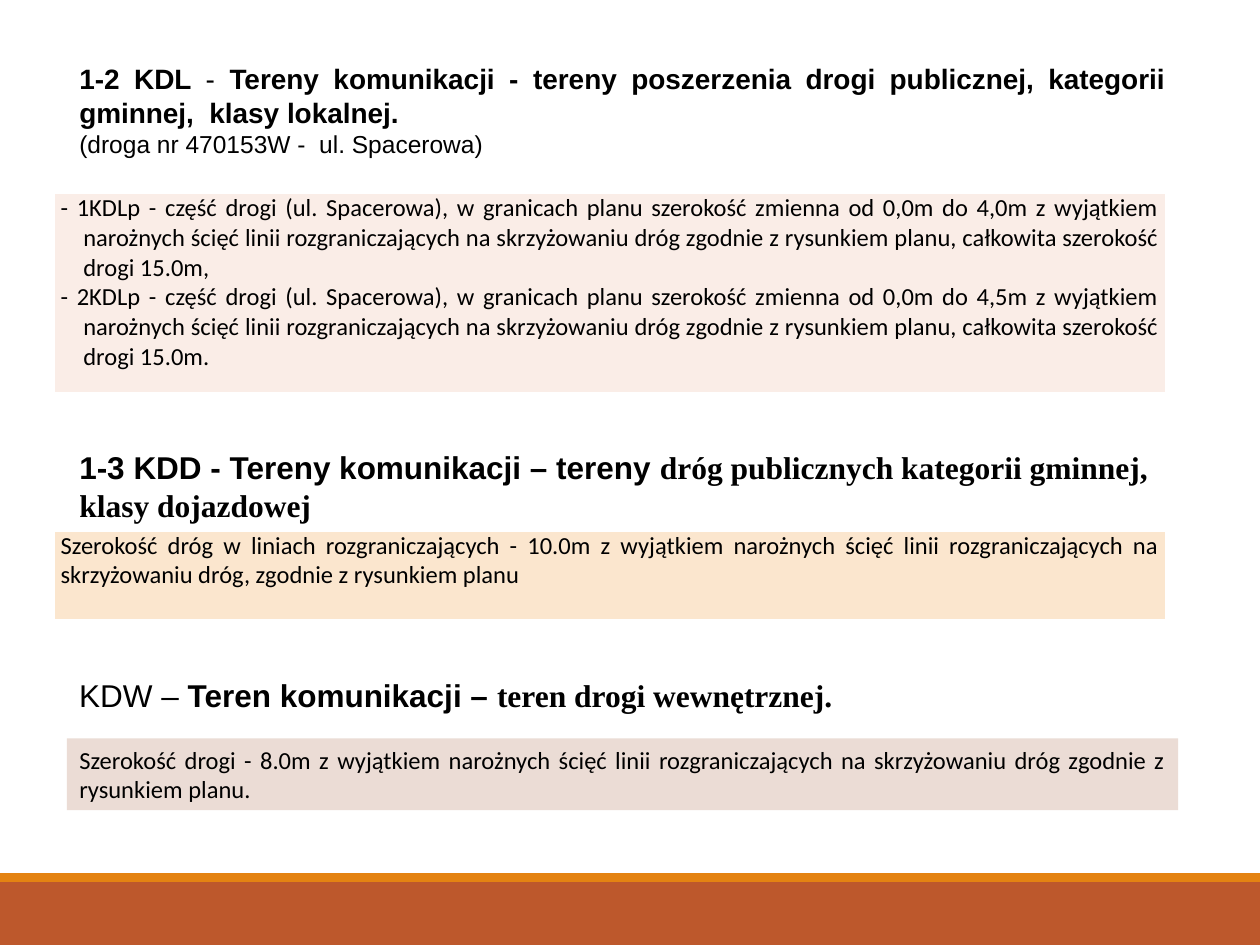
from lxml.etree import SubElement
from pptx import Presentation
from pptx.dml.color import RGBColor
from pptx.enum.shapes import MSO_SHAPE
from pptx.enum.text import MSO_ANCHOR, PP_ALIGN
from pptx.oxml.ns import qn
from pptx.util import Pt

SLIDE_WIDTH, SLIDE_HEIGHT = 720, 540
BLOCK_WIDTH = 635
TABLE_LEFT, TEXT_LEFT = 31, 38.2
HANGING_INDENT = 13
SERIF = "Times New Roman"


def color(hex_string):
    return RGBColor.from_string(hex_string)


def write_paragraph(paragraph, runs, size=14, font="Arial", justified=True, hanging=0):
    """Write runs given as (text, bold) or (text, bold, font)."""
    paragraph.alignment = PP_ALIGN.JUSTIFY if justified else PP_ALIGN.LEFT
    if hanging:
        properties = paragraph._p.get_or_add_pPr()
        properties.set("marL", str(Pt(hanging)))
        properties.set("indent", str(Pt(-hanging)))
    for text, bold, *other_font in runs:
        run = paragraph.add_run()
        run.text = text
        run.font.size = Pt(size)
        run.font.name = other_font[0] if other_font else font
        run.font.bold = bold
        run.font.color.rgb = color("000000")


def write_text(frame, paragraphs, **formats):
    """Write (runs, size) paragraphs into a text frame."""
    frame.word_wrap = True
    for index, (runs, size) in enumerate(paragraphs):
        paragraph = frame.add_paragraph() if index else frame.paragraphs[0]
        write_paragraph(paragraph, runs, size=size, **formats)


def fill_shape(shape, fill):
    shape.shadow.inherit = False
    shape.fill.solid()
    shape.fill.fore_color.rgb = color(fill)
    shape.line.fill.background()


def add_rectangle(slide, left, top, width, height, fill):
    shape = slide.shapes.add_shape(
        MSO_SHAPE.RECTANGLE, Pt(left), Pt(top), Pt(width), Pt(height))
    fill_shape(shape, fill)
    return shape


def add_heading(slide, left, top, width, height, paragraphs, justified=False):
    box = slide.shapes.add_textbox(Pt(left), Pt(top), Pt(width), Pt(height))
    write_text(box.text_frame, paragraphs, justified=justified)


def set_white_borders(cell):
    properties = cell._tc.get_or_add_tcPr()
    for position, side in enumerate(("lnL", "lnR", "lnT", "lnB")):
        line = SubElement(properties, qn(f"a:{side}"), w=str(Pt(1)))
        fill = SubElement(line, qn("a:solidFill"))
        SubElement(fill, qn("a:srgbClr"), val="FFFFFF")
        properties.insert(position, line)


def add_detail_table(slide, left, top, width, height, texts, fill, hanging=0):
    table = slide.shapes.add_table(
        1, 1, Pt(left), Pt(top), Pt(width), Pt(height)).table
    table.first_row = table.horz_banding = False
    cell = table.cell(0, 0)
    cell.margin_left = cell.margin_right = Pt(3.6)
    cell.margin_top = cell.margin_bottom = 0
    cell.fill.solid()
    cell.fill.fore_color.rgb = color(fill)
    set_white_borders(cell)
    paragraphs = [([(text, False)], 14) for text in texts]
    write_text(cell.text_frame, paragraphs, font="Calibri", hanging=hanging)


def add_detail_box(slide, left, top, width, height, text, fill):
    shape = add_rectangle(slide, left, top, width, height, fill)
    shape.text_frame.vertical_anchor = MSO_ANCHOR.TOP
    write_text(shape.text_frame, [([(text, False)], 14)], font="Calibri")


def add_footer_bands(slide, top, height, stripe_height):
    add_rectangle(slide, 0, top, SLIDE_WIDTH, height, "BD582C")
    add_rectangle(slide, 0, top - stripe_height, SLIDE_WIDTH, stripe_height, "E48312")


def add_local_roads(slide, top):
    add_heading(slide, TEXT_LEFT, top, BLOCK_WIDTH, 87, [
        ([("1-2 KDL ", True), ("- ", False),
          ("Tereny komunikacji - tereny poszerzenia drogi publicznej, "
           "kategorii gminnej,  klasy lokalnej.", True)], 16),
        ([("(droga nr 470153W -  ul. Spacerowa)", False)], 14),
    ], justified=True)
    road_text = (
        "- {} - część drogi (ul. Spacerowa), w granicach planu szerokość zmienna "
        "od 0,0m do {} z wyjątkiem narożnych ścięć linii rozgraniczających na "
        "skrzyżowaniu dróg zgodnie z rysunkiem planu, całkowita szerokość drogi 15.0m{}")
    roads = [("1KDLp", "4,0m", ","), ("2KDLp", "4,5m", ".")]
    add_detail_table(slide, TABLE_LEFT, top + 78.8, BLOCK_WIDTH, 114.2,
                     [road_text.format(*road) for road in roads],
                     "FAEDE7", hanging=HANGING_INDENT)


def add_access_roads(slide, top):
    add_heading(slide, TEXT_LEFT, top, BLOCK_WIDTH, 51, [
        ([("1-3 KDD - Tereny komunikacji – tereny ", True),
          ("dróg publicznych kategorii gminnej, klasy dojazdowej", True, SERIF)], 18)])
    add_detail_table(slide, TABLE_LEFT, top + 50.7, BLOCK_WIDTH, 51, [
        "Szerokość dróg w liniach rozgraniczających - 10.0m z wyjątkiem narożnych "
        "ścięć linii rozgraniczających na skrzyżowaniu dróg, zgodnie z rysunkiem planu",
    ], "FBE6CE")


def add_internal_road(slide, top):
    add_detail_box(
        slide, TEXT_LEFT, top + 39, BLOCK_WIDTH, 41,
        "Szerokość drogi - 8.0m z wyjątkiem narożnych ścięć linii rozgraniczających "
        "na skrzyżowaniu dróg zgodnie z rysunkiem planu.", "EBDCD5")
    add_heading(slide, TEXT_LEFT, top, 645, 29, [
        ([("KDW – ", False), ("Teren komunikacji – ", True),
          ("teren drogi wewnętrznej.", True, SERIF)], 18)])


def main():
    presentation = Presentation()
    presentation.slide_width = Pt(SLIDE_WIDTH)
    presentation.slide_height = Pt(SLIDE_HEIGHT)
    slide = presentation.slides.add_slide(presentation.slide_layouts[6])
    add_footer_bands(slide, top=504, height=36, stripe_height=5)
    add_local_roads(slide, top=31.6)
    add_access_roads(slide, top=252.6)
    add_internal_road(slide, top=383)
    presentation.save("out.pptx")


if __name__ == "__main__":
    main()
